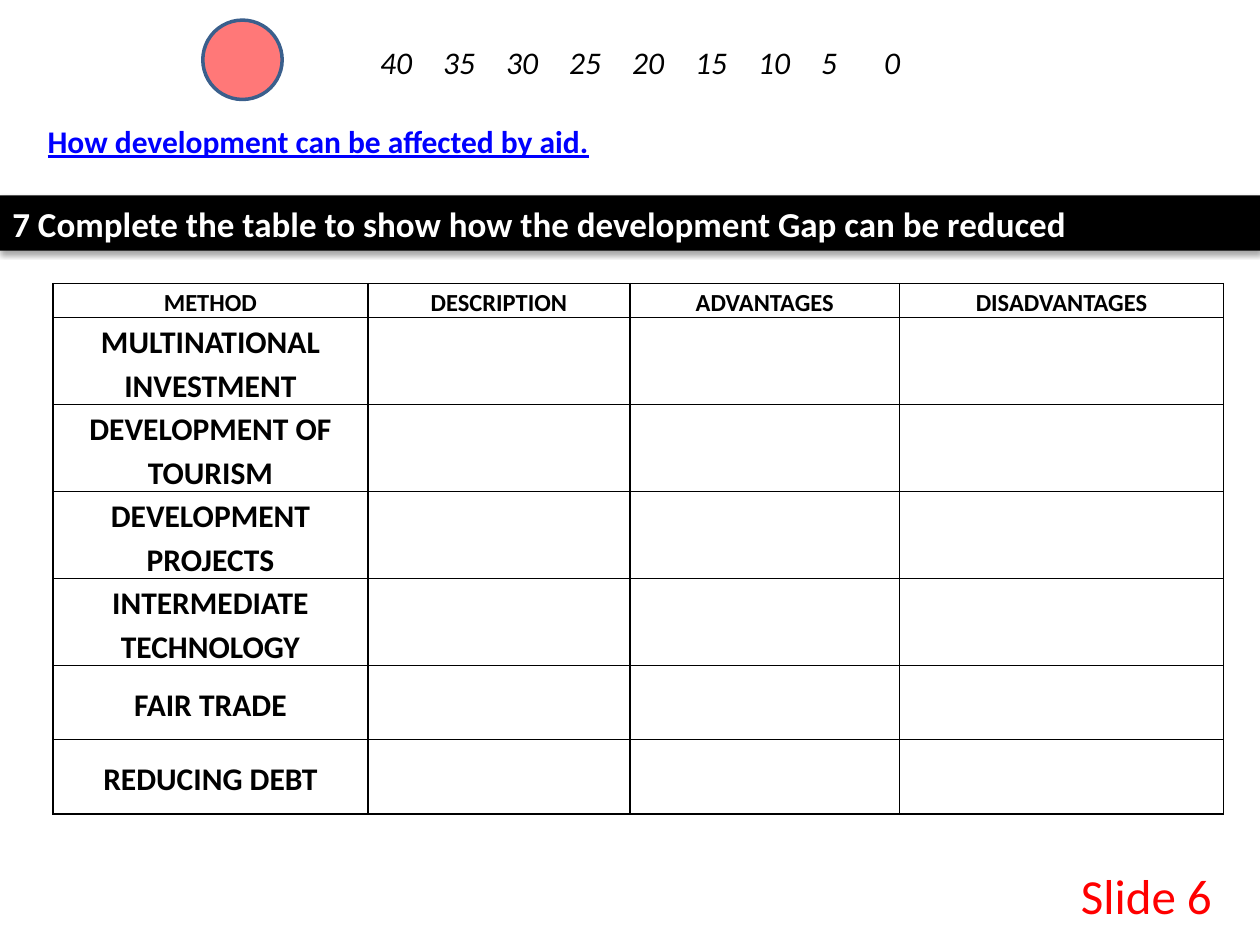
from lxml import etree
from pptx import Presentation
from pptx.dml.color import RGBColor
from pptx.enum.shapes import MSO_SHAPE as SHAPE
from pptx.enum.text import MSO_ANCHOR as ANCHOR, PP_ALIGN as ALIGN
from pptx.oxml import parse_xml
from pptx.oxml.ns import nsdecls, qn
from pptx.util import Inches, Pt

HEADERS = ["METHOD", "DESCRIPTION", "ADVANTAGES", "DISADVANTAGES"]
METHODS = ["MULTINATIONAL INVESTMENT", "DEVELOPMENT OF TOURISM",
           "DEVELOPMENT PROJECTS", "INTERMEDIATE TECHNOLOGY",
           "FAIR TRADE", "REDUCING DEBT"]
COL_WIDTHS = [2.5, 2.08, 2.14, 2.57]
ROW_HEIGHTS = [0.27] + [0.54] * 4 + [0.59] * 2


def rgb(color):
    return RGBColor.from_string(color)


def write(tf, text, size, color, align=ALIGN.LEFT, bold=False, italic=False, underline=False):
    p = tf.paragraphs[0]
    p.alignment = align
    p.add_run().text = text
    font = p.font
    font.name, font.size = "Calibri", Pt(size)
    font.bold, font.italic, font.underline = bold, italic, underline
    font.color.rgb = rgb(color)
    return p


def add_label(s, box, text, size, color, wrap=True, **style):
    sp = s.shapes.add_textbox(*map(Inches, box))
    sp.text_frame.word_wrap = wrap
    write(sp.text_frame, text, size, color, **style)


def add_scale(s, box):
    scores = "\t".join(str(n) for n in range(40, -1, -5))
    add_label(s, box, scores, 18, "000000", align=ALIGN.CENTER, italic=True)


def add_marker(s, box):
    sp = s.shapes.add_shape(SHAPE.OVAL, *map(Inches, box))
    sp.shadow.inherit = False
    sp.fill.solid()
    sp.fill.fore_color.rgb = rgb("FF0000")
    color = sp.fill._xPr.find(qn("a:solidFill"))[0]
    etree.SubElement(color, qn("a:alpha"), val="53000")
    sp.line.color.rgb = rgb("3A5F8C")
    sp.line.width = Pt(2)


def add_banner(s, box, text):
    sp = s.shapes.add_shape(SHAPE.RECTANGLE, *map(Inches, box))
    sp.fill.solid()
    sp.fill.fore_color.rgb = rgb("000000")
    sp.line.fill.background()
    sp._element.spPr.append(parse_xml(
        f'<a:effectLst {nsdecls("a")}>'
        f'<a:outerShdw blurRad="{Pt(3.1)}" dist="{Pt(1.8)}" dir="5400000" rotWithShape="0">'
        '<a:srgbClr val="000000"><a:alpha val="35000"/></a:srgbClr>'
        '</a:outerShdw></a:effectLst>'))
    sp.text_frame.word_wrap = True
    write(sp.text_frame, text, 20, "FFFFFF", bold=True)


def add_borders(cell):
    tcPr = cell._tc.get_or_add_tcPr()
    for i, side in enumerate(["lnL", "lnR", "lnT", "lnB"]):
        tcPr.insert(i, parse_xml(
            f'<a:{side} {nsdecls("a")} w="{Pt(1)}"><a:solidFill>'
            f'<a:srgbClr val="000000"/></a:solidFill></a:{side}>'))


def add_methods_table(s, box):
    table = s.shapes.add_table(len(ROW_HEIGHTS), len(COL_WIDTHS), *map(Inches, box)).table
    table.first_row = table.horz_banding = False
    for col, width in zip(table.columns, COL_WIDTHS):
        col.width = Inches(width)
    for row, height in zip(table.rows, ROW_HEIGHTS):
        row.height = Inches(height)
    rows = [HEADERS] + [[method, "", "", ""] for method in METHODS]
    for i, texts in enumerate(rows):
        for j, text in enumerate(texts):
            cell = table.cell(i, j)
            cell.fill.background()
            add_borders(cell)
            if text:
                cell.vertical_anchor = ANCHOR.MIDDLE
                cell.margin_left = cell.margin_right = Inches(0.07)
                cell.margin_top = cell.margin_bottom = 0
                p = write(cell.text_frame, text, 18 if i else 14, "000000",
                          align=ALIGN.CENTER, bold=True)
                p.line_spacing = 1.15


def main():
    prs = Presentation()
    prs.slide_width, prs.slide_height = Inches(10), Inches(7.5)
    s = prs.slides.add_slide(prs.slide_layouts[6])
    add_label(s, (8.48, 6.82, 1.42, 0.57), "Slide 6", 28, "FF0000")
    add_scale(s, (0.67, 0.29, 8.82, 0.4))
    add_marker(s, (1.61, 0.16, 0.63, 0.63))
    add_label(s, (0.28, 0.92, 4.54, 0.4), "How development can be affected by aid.",
              18, "0000FF", wrap=False, bold=True, underline=True)
    add_methods_table(s, (0.42, 2.25, 9.29, 4.21))
    add_banner(s, (0, 1.55, 10, 0.44),
               "7 Complete the table to show how the development Gap can be reduced")
    prs.save("out.pptx")


if __name__ == "__main__":
    main()
